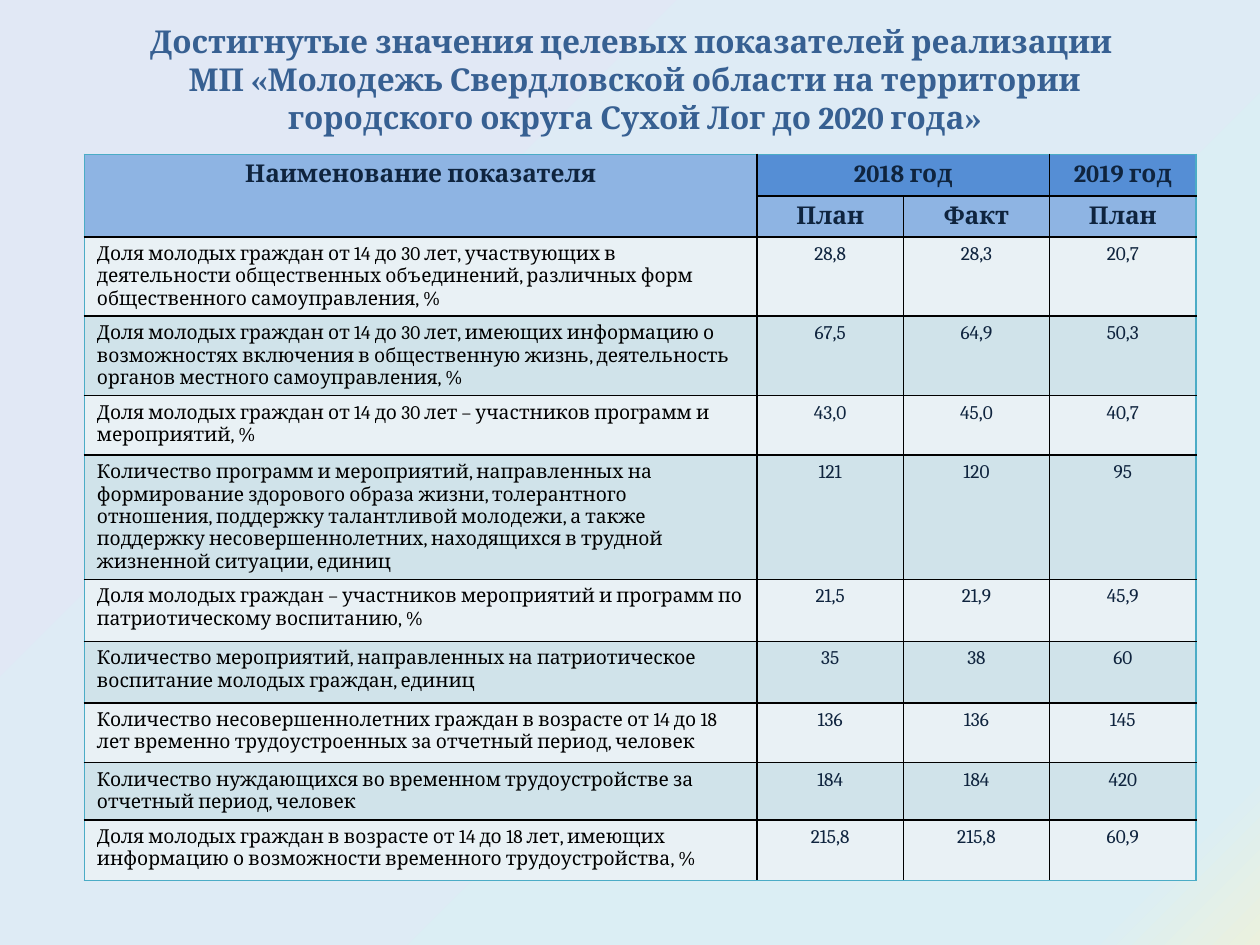
"""Build a slide with a table of planned and achieved youth programme indicators."""
import copy

import pptx
import pptx.dml.color
import pptx.enum.text
import pptx.oxml
import pptx.oxml.ns
import pptx.util
from pptx.util import Cm

INK, BLACK, TEAL = "0F243E", "000000", "4BACC6"
LIGHT_BLUE, STRONG_BLUE = "8EB4E3", "558ED5"
BANDS = ["E9F1F5", "D0E3EA"]


def style_paragraph(paragraph, size, color, bold, centered=True):
    align = pptx.enum.text.PP_ALIGN
    paragraph.alignment = align.CENTER if centered else align.LEFT
    paragraph.font.name = "Cambria"
    paragraph.font.size = pptx.util.Pt(size)
    paragraph.font.bold = bold
    paragraph.font.color.rgb = pptx.dml.color.RGBColor.from_string(color)


def add_border(cell, side, color):
    cell._tc.get_or_add_tcPr().append(pptx.oxml.parse_xml(
        f'<a:ln{side} {pptx.oxml.ns.nsdecls("a")} w="12700"><a:solidFill>'
        f'<a:srgbClr val="{color}"/></a:solidFill></a:ln{side}>'))


presentation = pptx.Presentation()
presentation.slide_width, presentation.slide_height = Cm(25.4), Cm(19.05)
slide = presentation.slides.add_slide(presentation.slide_layouts[5])

background = slide.background.fill
background.gradient()
background.gradient_angle = 135
stop_list = slide.element.find(".//" + pptx.oxml.ns.qn("a:gsLst"))
stop_list.append(copy.deepcopy(stop_list[-1]))
gradient = [(0, "EBF1DE"), (0.08, "DBEEF4"), (1, "E1E8F5")]
for stop, (position, color) in zip(background.gradient_stops, gradient):
    stop.position = position
    stop.color.rgb = pptx.dml.color.RGBColor.from_string(color)

title = slide.shapes.title
title.left, title.top, title.width, title.height = Cm(1.7), Cm(0.53), Cm(22.2), Cm(2.13)
title.text_frame.text = (
    "Достигнутые значения целевых показателей реализации \v"
    "МП «Молодежь Свердловской области на территории городского округа Сухой Лог до 2020 года»")
title.text_frame.vertical_anchor = pptx.enum.text.MSO_ANCHOR.MIDDLE
style_paragraph(title.text_frame.paragraphs[0], 18, "376092", True)

rows = [
    ("Наименование показателя", "2018 год", "", "2019 год"),
    ("", "План", "Факт", "План"),
    ("Доля молодых граждан от 14 до 30 лет, участвующих в деятельности общественных "
     "объединений, различных форм общественного самоуправления, %", "28,8", "28,3", "20,7"),
    ("Доля молодых граждан от 14 до 30 лет, имеющих информацию о возможностях включения в "
     "общественную жизнь, деятельность органов местного самоуправления, %",
     "67,5", "64,9", "50,3"),
    ("Доля молодых граждан от 14 до 30 лет – участников программ и мероприятий, %",
     "43,0", "45,0", "40,7"),
    ("Количество программ и мероприятий, направленных на формирование здорового образа жизни, "
     "толерантного отношения, поддержку талантливой молодежи, а также поддержку "
     "несовершеннолетних, находящихся в трудной жизненной ситуации, единиц",
     "121", "120", "95"),
    ("Доля молодых граждан – участников мероприятий и программ по патриотическому "
     "воспитанию, %", "21,5", "21,9", "45,9"),
    ("Количество мероприятий, направленных на патриотическое воспитание молодых граждан, "
     "единиц", "35", "38", "60"),
    ("Количество несовершеннолетних граждан в возрасте от 14 до 18 лет временно "
     "трудоустроенных за отчетный период, человек", "136", "136", "145"),
    ("Количество нуждающихся во временном трудоустройстве за отчетный период, человек",
     "184", "184", "420"),
    ("Доля молодых граждан в возрасте от 14 до 18 лет, имеющих информацию о возможности "
     "временного трудоустройства, %", "215,8", "215,8", "60,9"),
]
column_widths = [13.56, 2.95, 2.95, 2.95]
row_heights = [0.84, 0.82, 1.6, 1.6, 1.2, 2.49, 1.25, 1.24, 1.2, 1.16, 1.22]

table = slide.shapes.add_table(
    len(rows), len(column_widths), Cm(1.7), Cm(3.11),
    Cm(sum(column_widths)), Cm(sum(row_heights))).table
for column, width in zip(table.columns, column_widths):
    column.width = Cm(width)
for row, height in zip(table.rows, row_heights):
    row.height = Cm(height)
table.cell(0, 0).merge(table.cell(1, 0))
table.cell(0, 1).merge(table.cell(0, 2))

last_row, last_column = len(rows) - 1, len(column_widths) - 1
for row_index, values in enumerate(rows):
    for column_index, value in enumerate(values):
        cell = table.cell(row_index, column_index)
        is_header, is_name = row_index < 2, column_index == 0
        outer_sides = {"L": is_name, "R": column_index == last_column,
                       "T": row_index == 0, "B": row_index == last_row}
        for side, is_outer in outer_sides.items():
            add_border(cell, side, TEAL if is_outer else BLACK)
        if is_header:
            fill = STRONG_BLUE if row_index == 0 and not is_name else LIGHT_BLUE
        else:
            fill = BANDS[row_index % 2]
        cell.fill.solid()
        cell.fill.fore_color.rgb = pptx.dml.color.RGBColor.from_string(fill)
        if value:
            cell.text_frame.text = value
            style_paragraph(cell.text_frame.paragraphs[0], 14 if is_header else 11,
                            BLACK if is_name and not is_header else INK,
                            is_header, is_header or not is_name)

presentation.save("out.pptx")
